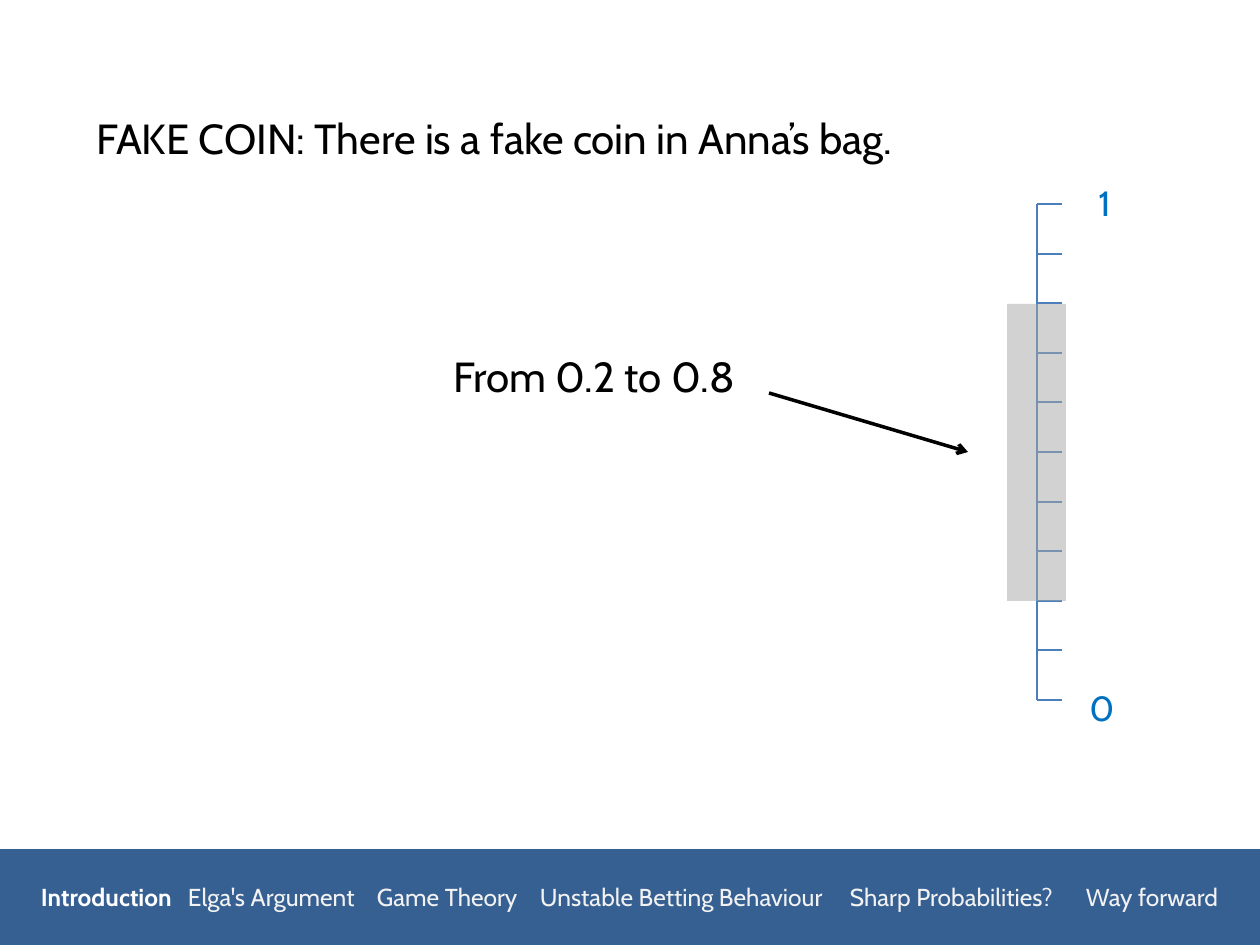
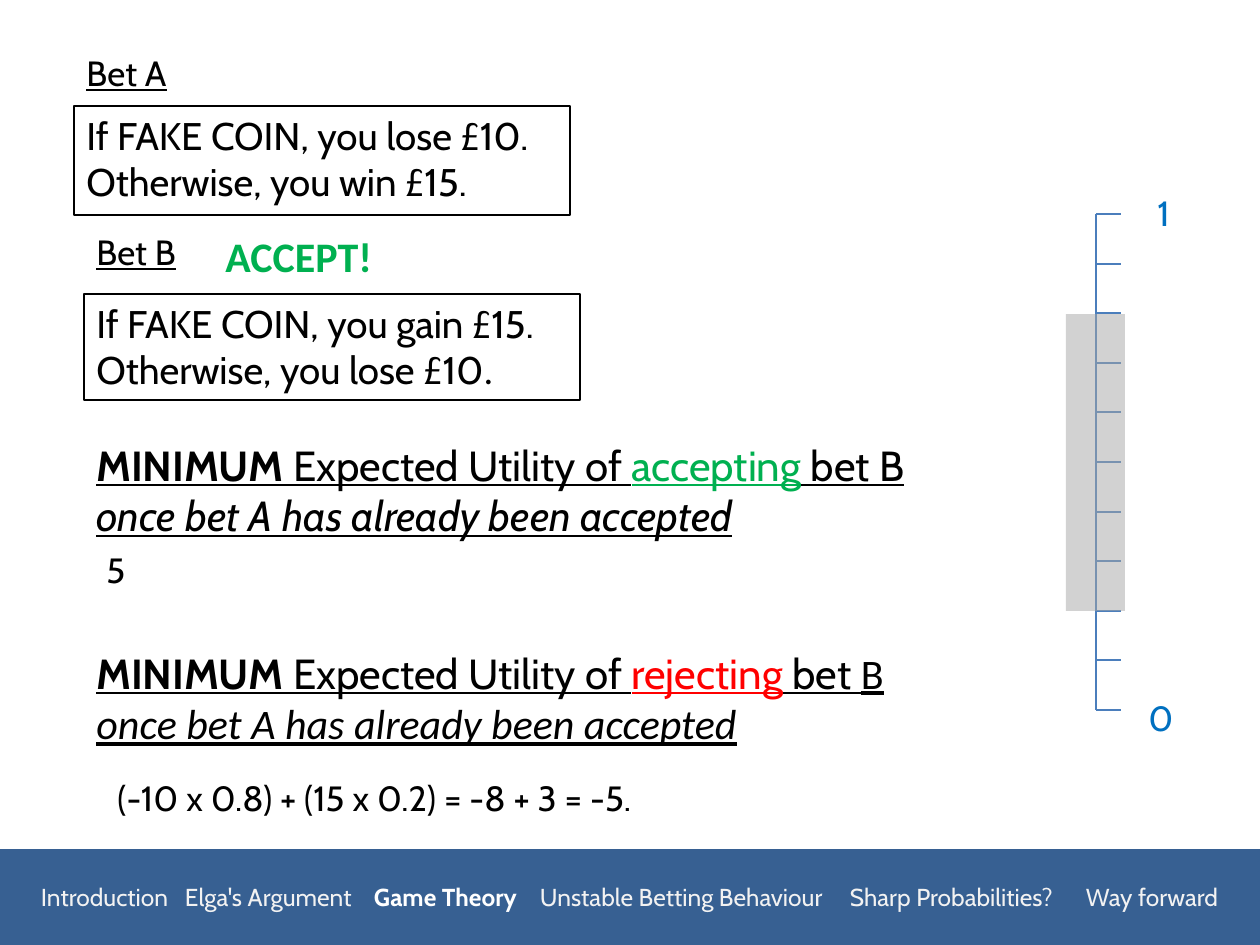
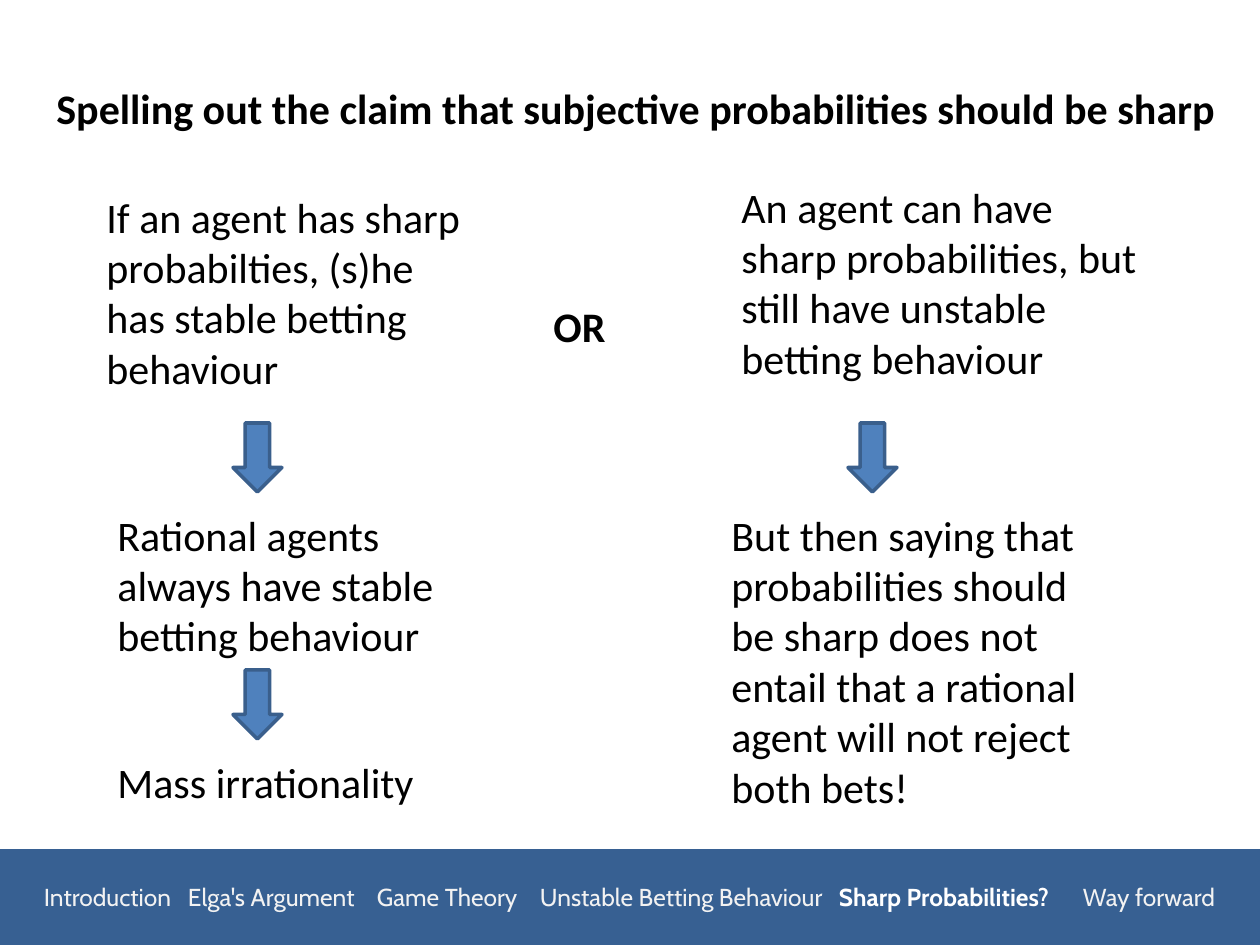
from typing import NamedTuple

from lxml import etree
from pptx import Presentation
from pptx.dml.color import RGBColor
from pptx.enum.shapes import MSO_CONNECTOR, MSO_SHAPE
from pptx.enum.text import MSO_ANCHOR, PP_ALIGN
from pptx.oxml.ns import qn
from pptx.util import Pt

# Scale, fonts and colours
SCALE = 914400 / 126
RECT, DOWN = MSO_SHAPE.RECTANGLE, MSO_SHAPE.DOWN_ARROW
LINE = MSO_CONNECTOR.STRAIGHT
LEFT = PP_ALIGN.LEFT
TOP, MIDDLE = MSO_ANCHOR.TOP, MSO_ANCHOR.MIDDLE
CABIN, CALIBRI = "Cabin", "Calibri"

BLACK = RGBColor(0x00, 0x00, 0x00)
WHITE = RGBColor(0xFF, 0xFF, 0xFF)
PALE = RGBColor(0xF2, 0xF2, 0xF2)
GREY = RGBColor(0xA6, 0xA6, 0xA6)
NAVY = RGBColor(0x37, 0x60, 0x92)
BLUE = RGBColor(0x4F, 0x81, 0xBD)
EDGE = RGBColor(0x3A, 0x5F, 0x8C)
TICK = RGBColor(0x4B, 0x7E, 0xBC)
LABEL = RGBColor(0x00, 0x70, 0xC0)
GREEN = RGBColor(0x00, 0xB0, 0x50)
RED = RGBColor(0xFF, 0x00, 0x00)

# Footer sections and the ruler
PARTS = ("Introduction", "Elga's Argument", "Game Theory",
         "Unstable Betting Behaviour", "Sharp Probabilities?", "Way forward")
RULE, STEPS, MARK = 496, 10, 25


class Run(NamedTuple):
    text: str
    size: int = 24
    font: str = CABIN
    color: RGBColor = BLACK
    bold: bool = False
    ital: bool = False
    under: bool = False


class Box(NamedTuple):
    x: int
    y: int
    w: int
    h: int
    runs: tuple[Run, ...]
    frame: bool = False


class Foot(NamedTuple):
    active: int
    starts: tuple[int, ...]


def px(n: float) -> int:
    return round(n * SCALE)


def fill_text(frame, runs: tuple[Run, ...]) -> None:
    frame.word_wrap = True
    para = frame.paragraphs[0]
    para.alignment = LEFT
    for item in runs:
        run = para.add_run()
        run.text = item.text
        font = run.font
        font.size, font.name = Pt(item.size), item.font
        font.color.rgb = item.color
        font.bold, font.italic = item.bold, item.ital
        if item.under:
            font.underline = True


def add_shape(slide, kind, x: int, y: int, w: int, h: int,
              fill: RGBColor | None = None, line: RGBColor | None = None,
              width: float = 0.75):
    shape = slide.shapes.add_shape(kind, px(x), px(y), px(w), px(h))
    shape.shadow.inherit = False
    if fill is None:
        shape.fill.background()
    else:
        shape.fill.solid()
        shape.fill.fore_color.rgb = fill
    if line is None:
        shape.line.fill.background()
    else:
        shape.line.color.rgb = line
        shape.line.width = Pt(width)
    return shape


def add_box(slide, box: Box) -> None:
    if box.frame:
        shape = add_shape(slide, RECT, *box[:4], line=BLACK)
    else:
        shape = slide.shapes.add_textbox(*map(px, box[:4]))
    shape.text_frame.vertical_anchor = TOP
    fill_text(shape.text_frame, box.runs)


def add_line(slide, x: int, y: int, to_x: int, to_y: int,
             color: RGBColor = TICK, width: float = 0.75, head: bool = False) -> None:
    line = slide.shapes.add_connector(LINE, px(x), px(y), px(to_x), px(to_y))
    line.line.color.rgb = color
    line.line.width = Pt(width)
    if head:
        etree.SubElement(line.line._get_or_add_ln(), qn("a:tailEnd"), type="arrow")
    etree.SubElement(line._element.spPr, qn("a:effectLst"))


def add_ruler(slide, x: int, y: int) -> None:
    for i in range(STEPS + 1):
        mark = y + round(RULE * i / STEPS)
        add_line(slide, x, mark, x + MARK, mark)
    add_line(slide, x, y, x, y + RULE)
    # Half-clear band from 0.2 to 0.8
    band = add_shape(slide, RECT, x - 30, y + 100, 59, 297, GREY)
    tint = band.fill._xPr.find(qn("a:solidFill"))[0]
    etree.SubElement(tint, qn("a:alpha"), val="50000")
    for text, dx, dy in (("1", 49, -29), ("0", 40, 476)):
        add_box(slide, Box(x + dx, y + dy, 69, 55, (Run(text, 20, color=LABEL),)))


def add_foot(slide, foot: Foot) -> None:
    bar = add_shape(slide, RECT, 0, 849, 1260, 96, NAVY)
    frame = bar.text_frame
    frame.vertical_anchor = MIDDLE
    frame.margin_left, frame.margin_right = px(foot.starts[0]), 0
    runs = []
    for i, part in enumerate(PARTS):
        on = i == foot.active
        if i:
            runs.append(Run("\t", 14, color=PALE))
        runs.append(Run(part, 14, color=WHITE if on else PALE, bold=on))
    fill_text(frame, tuple(runs))
    tabs = etree.SubElement(frame.paragraphs[0]._p.get_or_add_pPr(), qn("a:tabLst"))
    for start in foot.starts[1:]:
        etree.SubElement(tabs, qn("a:tab"), pos=str(px(start - foot.starts[0])), algn="l")


def claim(verb: str, color: RGBColor, tail: tuple[Run, ...]) -> tuple[Run, ...]:
    return (Run("MINIMUM ", bold=True, under=True),
            Run("Expected Utility of ", under=True),
            Run(verb, color=color, under=True), *tail,
            Run("once bet A has already been accepted", ital=True, under=True))


def plain(text: str, bold: bool = False) -> tuple[Run, ...]:
    return (Run(text, font=CALIBRI, bold=bold),)


# Text of each slide
COIN = (
    Box(84, 106, 873, 63, (Run("FAKE COIN: There is a fake coin in Anna’s bag."),)),
    Box(441, 344, 307, 63, (Run("From 0.2 to 0.8"),)),
)
BETS = (
    Box(74, 45, 348, 55, (Run("Bet A", 20, under=True),)),
    Box(74, 106, 496, 109,
        (Run("If FAKE COIN, you lose £10. Otherwise, you win £15.", 22),), True),
    Box(84, 224, 348, 55, (Run("Bet B", 20, under=True),)),
    Box(84, 294, 496, 106,
        (Run("If FAKE COIN, you gain £15. Otherwise, you lose £10", 22),
         Run(".", 22, CALIBRI)), True),
    Box(213, 224, 208, 63, (Run("ACCEPT!", font=CALIBRI, color=GREEN, bold=True),)),
    Box(84, 433, 853, 165,
        claim("accepting", GREEN, (Run(" bet B ", under=True),))),
    Box(94, 542, 684, 55, (Run("5", 20),)),
    Box(84, 641, 863, 165,
        claim("rejecting", RED, (Run(" bet ", under=True),
                                 Run("B ", font=CALIBRI, under=True)))
        [:-1] + (Run("once bet A has already been accepted", font=CALIBRI,
                     ital=True, under=True),)),
    Box(105, 770, 684, 55, (Run("(-10 x 0.8) + (15 x 0.2) = -8 + 3 = -5.", 20),)),
)
SHARP = (
    Box(44, 76, 1191, 63, plain(
        "Spelling out the claim that subjective probabilities should be sharp", True)),
    Box(94, 185, 387, 217, plain(
        "If an agent has sharp probabilties, (s)he has stable betting behaviour")),
    Box(729, 175, 436, 217, plain(
        "An agent can have sharp probabilities, but still have unstable betting behaviour")),
    Box(541, 294, 129, 63, plain("OR", True)),
    Box(105, 503, 387, 165, plain("Rational agents always have stable betting behaviour")),
    Box(105, 750, 387, 63, plain("Mass irrationality")),
    Box(719, 503, 387, 318, plain(
        "But then saying that probabilities should be sharp does not entail that "
        "a rational agent will not reject both bets!")),
)
DROPS = ((233, 423), (233, 670), (848, 423))


def main() -> None:
    deck = Presentation()
    deck.slide_width, deck.slide_height = px(1260), px(945)

    def new_slide(boxes: tuple[Box, ...], foot: Foot):
        slide = deck.slides.add_slide(deck.slide_layouts[6])
        for box in boxes:
            add_box(slide, box)
        add_foot(slide, foot)
        return slide

    # Fake coin
    coin = new_slide(COIN, Foot(0, (41, 188, 377, 540, 850, 1086)))
    add_ruler(coin, 1037, 204)
    add_line(coin, 769, 393, 968, 452, BLACK, 2, head=True)

    # Two bets
    bets = new_slide(BETS, Foot(2, (41, 185, 374, 540, 850, 1086)))
    add_ruler(bets, 1096, 214)

    # Sharp claim
    sharp = new_slide(SHARP, Foot(4, (44, 188, 377, 540, 839, 1083)))
    for x, y in DROPS:
        add_shape(sharp, DOWN, x, y, 49, 69, BLUE, EDGE, 2)

    deck.save("out.pptx")


if __name__ == "__main__":
    main()
